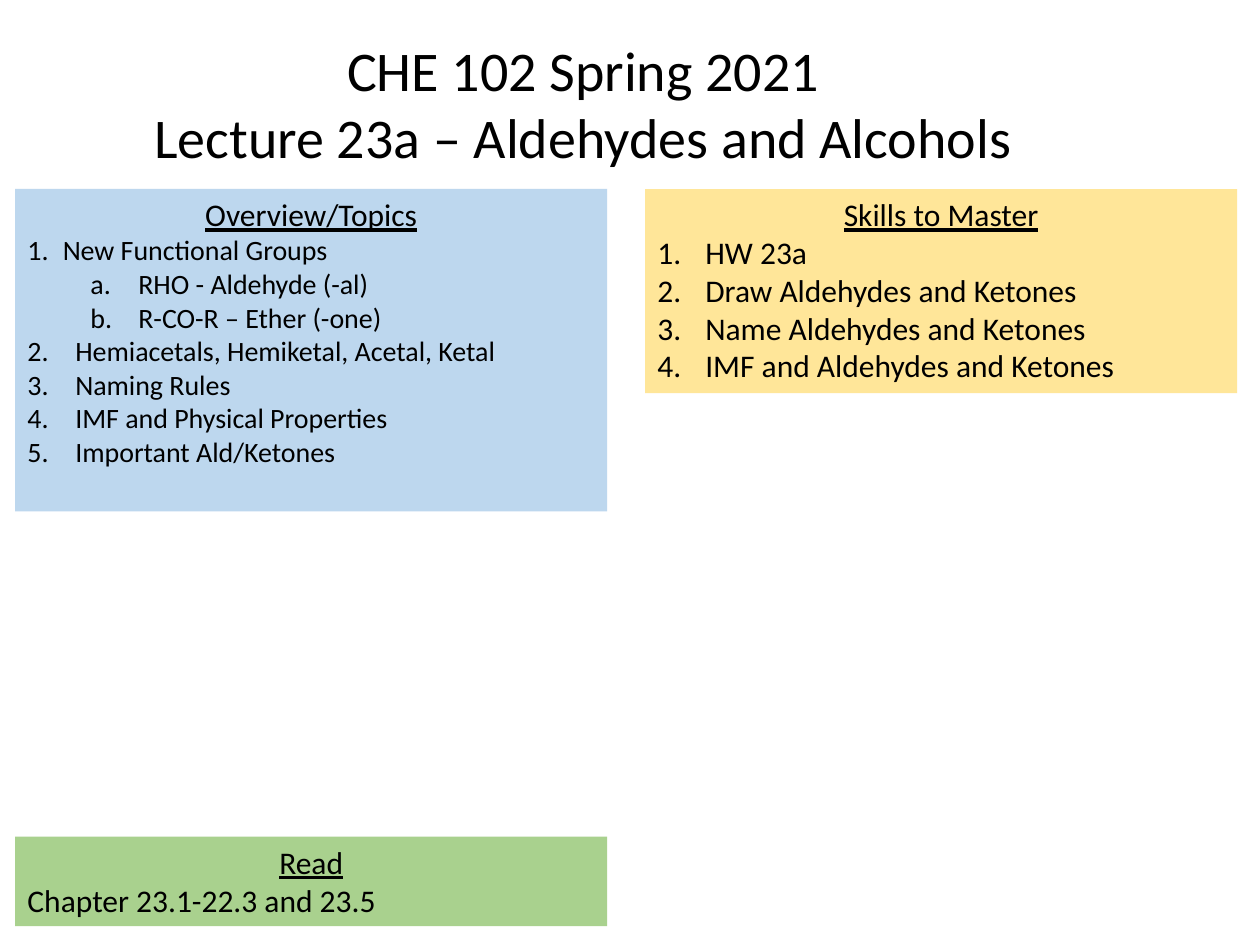
from pptx import Presentation
from pptx.dml.color import RGBColor
from pptx.enum.shapes import MSO_SHAPE
from pptx.enum.text import MSO_ANCHOR, MSO_AUTO_SIZE, PP_ALIGN
from pptx.oxml.xmlchemy import OxmlElement
from pptx.util import Inches, Pt

RECTANGLE = MSO_SHAPE.RECTANGLE
CENTER, LEFT = PP_ALIGN.CENTER, PP_ALIGN.LEFT
TOP = MSO_ANCHOR.TOP
NO_AUTOFIT = MSO_AUTO_SIZE.NONE

BLACK = RGBColor(0x00, 0x00, 0x00)
BLUE = RGBColor(0xBD, 0xD7, 0xEE)
YELLOW = RGBColor(0xFF, 0xE6, 0x99)
GREEN = RGBColor(0xA9, 0xD1, 0x8E)

TITLE_ONLY = 5
LEFT_COLUMN, RIGHT_COLUMN = 0.12, 5.12
PANEL_WIDTH = 4.7
# Numbering scheme and text indent for each outline level
NUMBERING = [("arabicPeriod", 0.38), ("alphaLcPeriod", 0.88)]
HANGING = 0.38


class LectureSlide:
    font_name = "Calibri"
    title_size = 32
    heading_size = 18

    def __init__(self, deck):
        self.slide = deck.slides.add_slide(deck.slide_layouts[TITLE_ONLY])

    def set_text(self, para, text, size, align=LEFT, underline=False):
        para.text = text
        para.alignment = align
        font = para.font
        font.name = self.font_name
        font.size = Pt(size)
        font.color.rgb = BLACK
        font.underline = underline

    def number(self, para, level, hanging):
        scheme, indent = NUMBERING[level]
        para.level = level
        properties = para._p.get_or_add_pPr()
        properties.set("marL", str(Inches(indent - HANGING + hanging)))
        properties.set("indent", str(-Inches(hanging)))
        bullet = OxmlElement("a:buAutoNum")
        bullet.set("type", scheme)
        properties.insert_element_before(bullet, "a:tabLst", "a:defRPr", "a:extLst")

    def title(self, lines, left, top, width, height):
        box = self.slide.shapes.title
        box.left, box.top = Inches(left), Inches(top)
        box.width, box.height = Inches(width), Inches(height)
        frame = box.text_frame
        frame.auto_size = NO_AUTOFIT
        frame.word_wrap = False
        frame.vertical_anchor = TOP
        for index, line in enumerate(lines):
            para = frame.add_paragraph() if index else frame.paragraphs[0]
            self.set_text(para, line, self.title_size, CENTER)

    def panel(self, heading, left, top, height, color):
        box = self.slide.shapes.add_shape(
            RECTANGLE, Inches(left), Inches(top), Inches(PANEL_WIDTH), Inches(height))
        box.shadow.inherit = False
        box.fill.solid()
        box.fill.fore_color.rgb = color
        box.line.fill.background()
        frame = box.text_frame
        frame.word_wrap = True
        frame.vertical_anchor = TOP
        self.set_text(frame.paragraphs[0], heading, self.heading_size, CENTER, True)
        return frame

    def body(self, frame, text, size):
        para = frame.add_paragraph()
        self.set_text(para, text, size)
        return para

    def outline(self, frame, items, size, first_hanging=HANGING):
        for index, (level, text) in enumerate(items):
            para = self.body(frame, text, size)
            self.number(para, level, HANGING if index else first_hanging)


def main():
    deck = Presentation()
    deck.slide_width, deck.slide_height = Inches(10), Inches(7.5)
    page = LectureSlide(deck)

    # Title
    page.title(["CHE 102 Spring 2021", "Lecture 23a – Aldehydes and Alcohols"],
               1.09, 0.23, 7.08, 1.18)

    # Topics
    topics = page.panel("Overview/Topics", LEFT_COLUMN, 1.5, 2.56, BLUE)
    page.outline(topics, [
        (0, "New Functional Groups"),
        (1, "RHO - Aldehyde (-al)"),
        (1, "R-CO-R – Ether (-one)"),
        (0, "Hemiacetals, Hemiketal, Acetal, Ketal"),
        (0, "Naming Rules"),
        (0, "IMF and Physical Properties"),
        (0, "Important Ald/Ketones"),
    ], 16, first_hanging=0.28)

    # Skills
    skills = page.panel("Skills to Master", RIGHT_COLUMN, 1.5, 1.62, YELLOW)
    page.outline(skills, [
        (0, "HW 23a"),
        (0, "Draw Aldehydes and Ketones"),
        (0, "Name Aldehydes and Ketones"),
        (0, "IMF and Aldehydes and Ketones"),
    ], 18)

    # Reading
    reading = page.panel("Read", LEFT_COLUMN, 6.64, 0.71, GREEN)
    page.body(reading, "Chapter 23.1-22.3 and 23.5", 18)

    deck.save("out.pptx")


if __name__ == "__main__":
    main()
